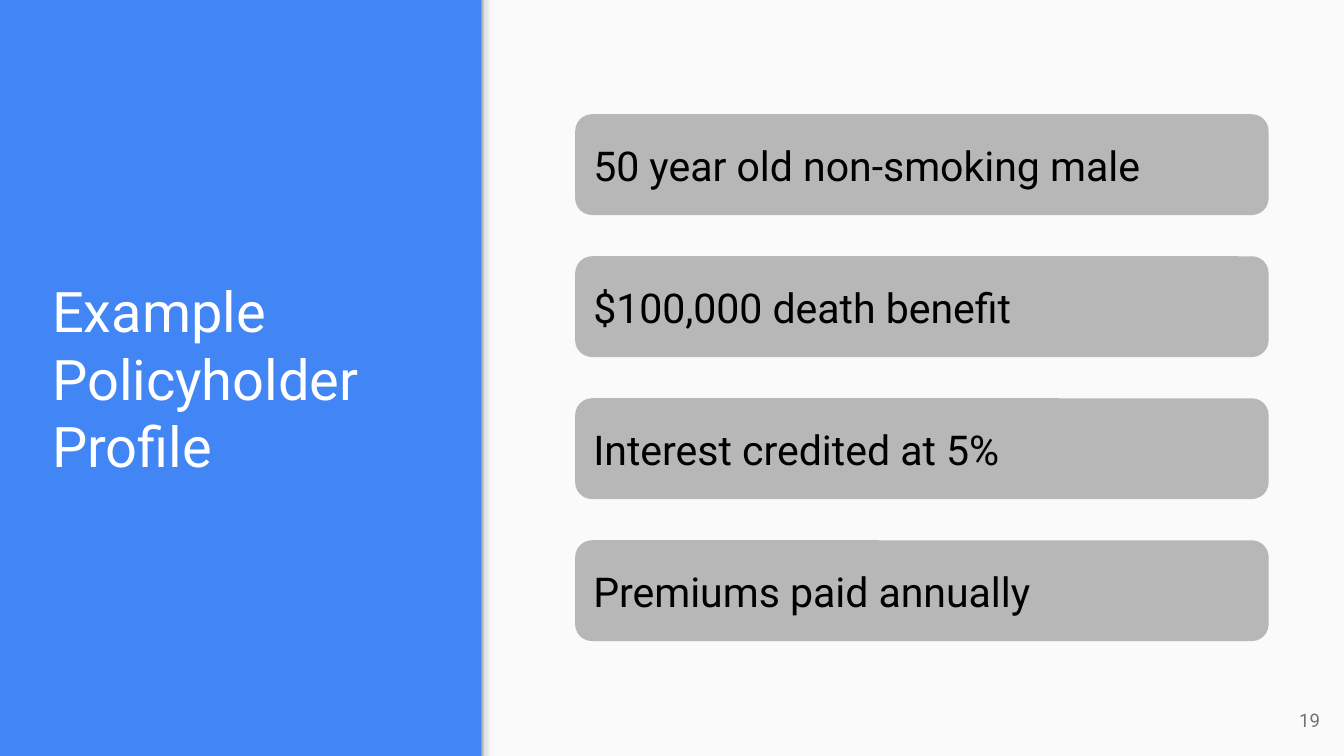
import copy
from dataclasses import dataclass

import pptx
import pptx.dml.color
import pptx.enum.shapes
import pptx.enum.text
import pptx.oxml.ns
import pptx.util

Inches = pptx.util.Inches
SHAPE = pptx.enum.shapes.MSO_SHAPE
ALIGN = pptx.enum.text.PP_ALIGN

COLORS = {
    "blue": "4285F4",
    "panel": "FAFAFA",
    "card": "B7B7B7",
    "white": "FFFFFF",
    "black": "000000",
    "number": "737373",
}
SHADOW_STOPS = [(0, "999999"), (0.2, "DEDEDE"), (0.64, "F9F9F9"), (1, "F9F9F9")]
WIDTH = 10
HEIGHT = WIDTH * 9 / 16
PANEL_LEFT = 3.58
FIRST_CARD_TOP, LAST_CARD_TOP = 0.85, 4.02


@dataclass
class Box:
    left: float
    top: float
    width: float
    height: float

    def lengths(self) -> list:
        return [Inches(v) for v in (self.left, self.top, self.width, self.height)]


@dataclass
class Label:
    text: str
    size: int
    color: str
    align: ALIGN = ALIGN.LEFT


def rgb(value: str) -> pptx.dml.color.RGBColor:
    return pptx.dml.color.RGBColor.from_string(value)


def write(sp, label: Label) -> None:
    tf = sp.text_frame
    frame_format = {
        "word_wrap": True,
        "vertical_anchor": pptx.enum.text.MSO_ANCHOR.MIDDLE,
        **{f"margin_{side}": Inches(0.1) for side in ("left", "top", "right", "bottom")},
    }
    for name, value in frame_format.items():
        setattr(tf, name, value)
    p = tf.paragraphs[0]
    p.alignment = label.align
    r = p.add_run()
    r.text = label.text
    for name, value in {"name": "Roboto", "size": pptx.util.Pt(label.size)}.items():
        setattr(r.font, name, value)
    r.font.color.rgb = rgb(COLORS[label.color])


def add_block(s, kind: SHAPE, box: Box, color: str):
    sp = s.shapes.add_shape(kind, *box.lengths())
    sp.shadow.inherit = False
    sp.fill.solid()
    sp.fill.fore_color.rgb = rgb(COLORS[color])
    sp.line.fill.background()
    return sp


def add_text(s, box: Box, label: Label) -> None:
    write(s.shapes.add_textbox(*box.lengths()), label)


def set_gradient(sp, stops: list, angle: float) -> None:
    sp.fill.gradient()
    sp.fill.gradient_angle = angle
    gs_list = sp._element.spPr.find(".//" + pptx.oxml.ns.qn("a:gsLst"))
    while len(gs_list) < len(stops):
        gs_list.append(copy.deepcopy(gs_list[0]))
    for stop, (position, color) in zip(sp.fill.gradient_stops, stops):
        stop.position = position
        stop.color.rgb = rgb(color)


def main() -> None:
    prs = pptx.Presentation()
    prs.slide_width, prs.slide_height = Inches(WIDTH), Inches(HEIGHT)
    s = prs.slides.add_slide(prs.slide_layouts[6])
    s.background.fill.solid()
    s.background.fill.fore_color.rgb = rgb(COLORS["blue"])

    # Light panel with a soft shadow along its left edge
    add_block(s, SHAPE.RECTANGLE, Box(PANEL_LEFT, 0, WIDTH - PANEL_LEFT, HEIGHT), "panel")
    edge = add_block(s, SHAPE.RECTANGLE, Box(PANEL_LEFT, 0, 0.12, HEIGHT), "panel")
    set_gradient(edge, SHADOW_STOPS, 0)

    # Title
    add_text(s, Box(0.29, 2.29, 3.07, 1.04),
             Label("Example Policyholder Profile", 30, "white"))

    # Profile cards, evenly spaced
    facts = [
        "50 year old non-smoking male",
        "$100,000 death benefit",
        "Interest credited at 5%",
        "Premiums paid annually",
    ]
    step = (LAST_CARD_TOP - FIRST_CARD_TOP) / (len(facts) - 1)
    for i, fact in enumerate(facts):
        card = add_block(s, SHAPE.ROUNDED_RECTANGLE,
                         Box(4.28, FIRST_CARD_TOP + step * i, 5.16, 0.75), "card")
        write(card, Label(fact, 22, "black"))

    # Slide number
    add_text(s, Box(9.32, 5.14, 0.6, 0.43), Label("19", 10, "number", ALIGN.RIGHT))

    prs.save("out.pptx")


if __name__ == "__main__":
    main()
